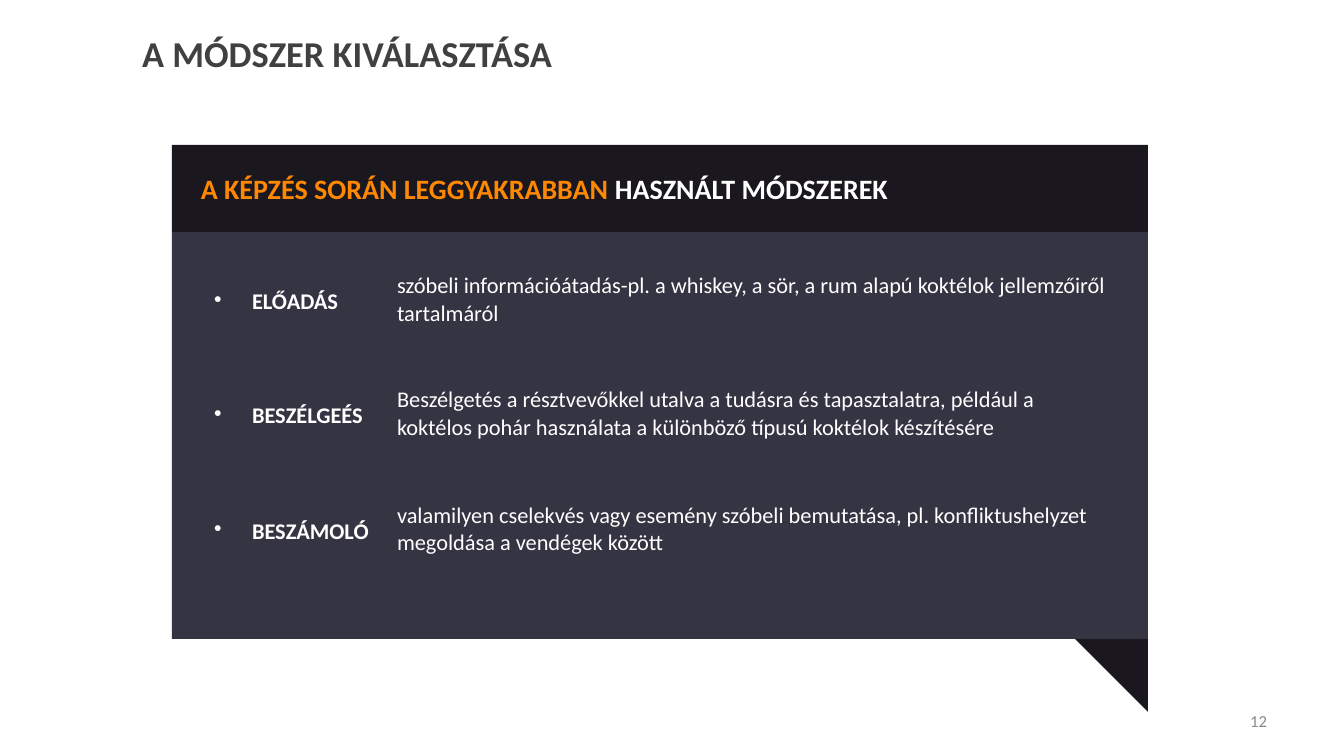
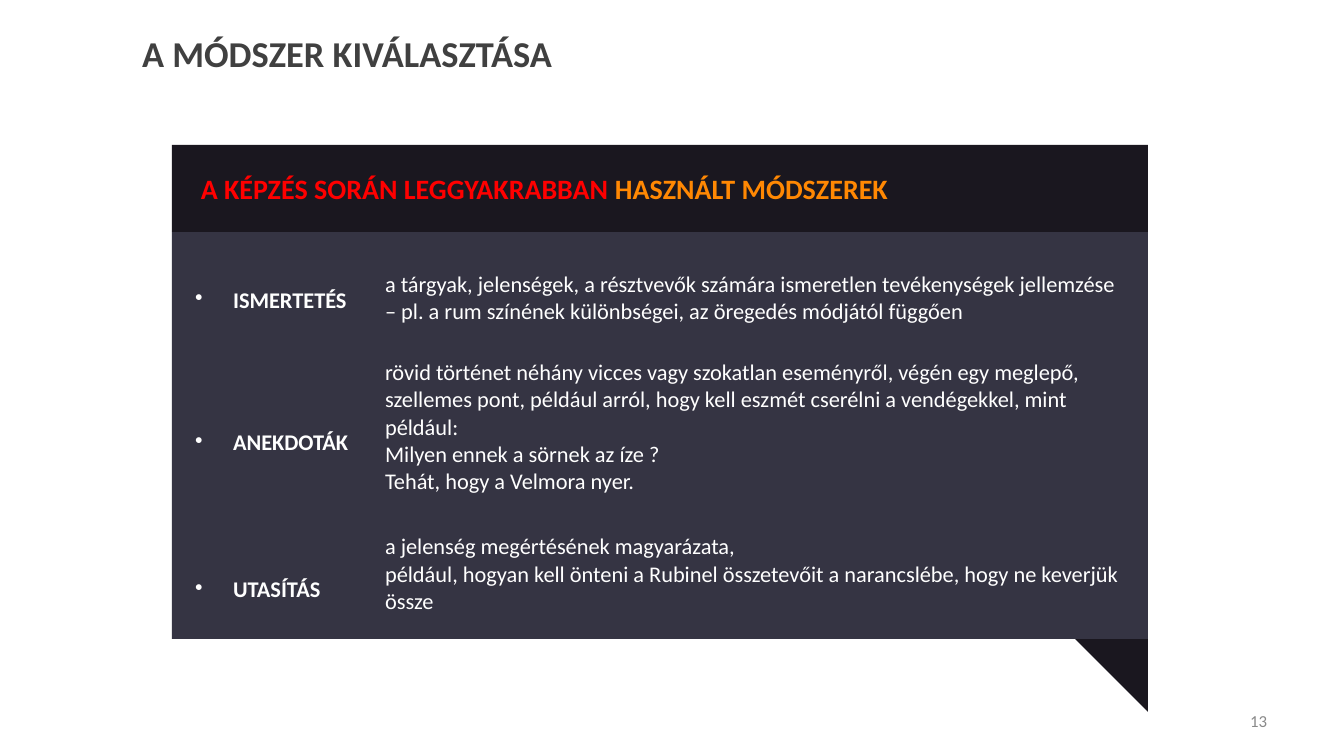
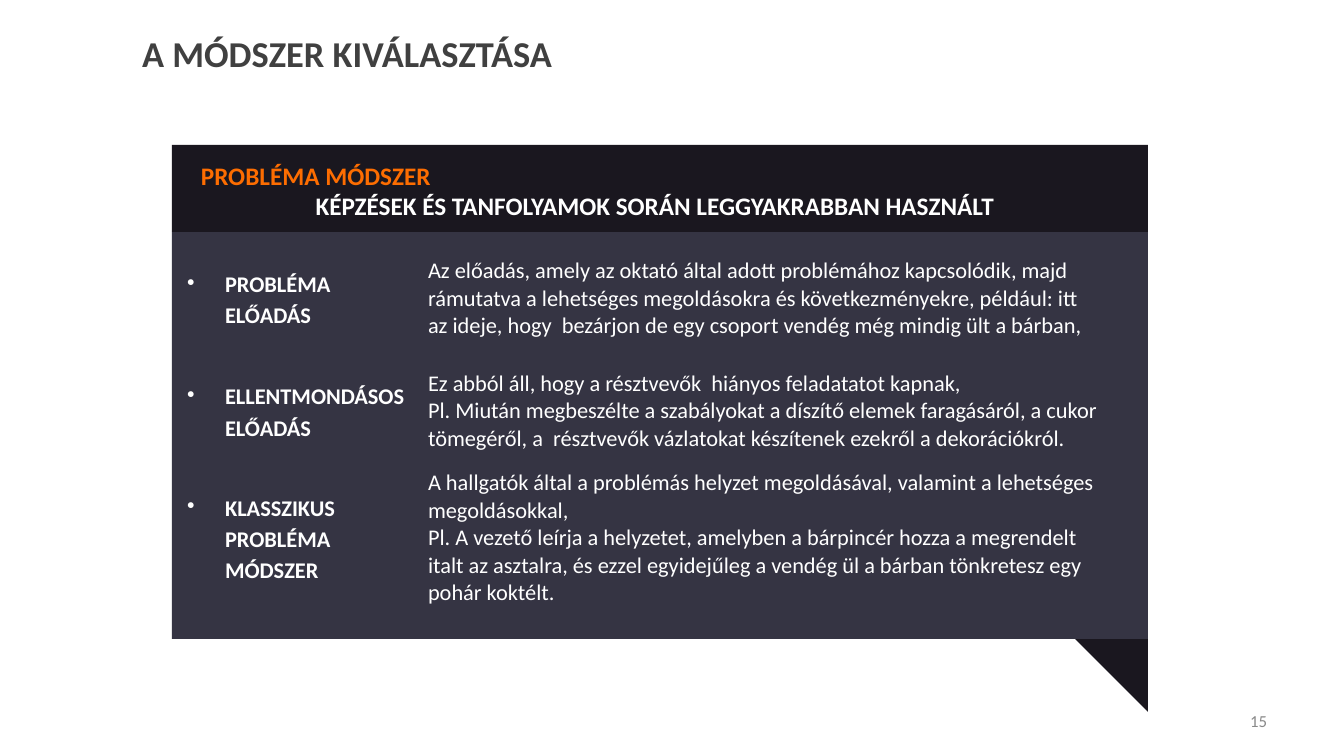
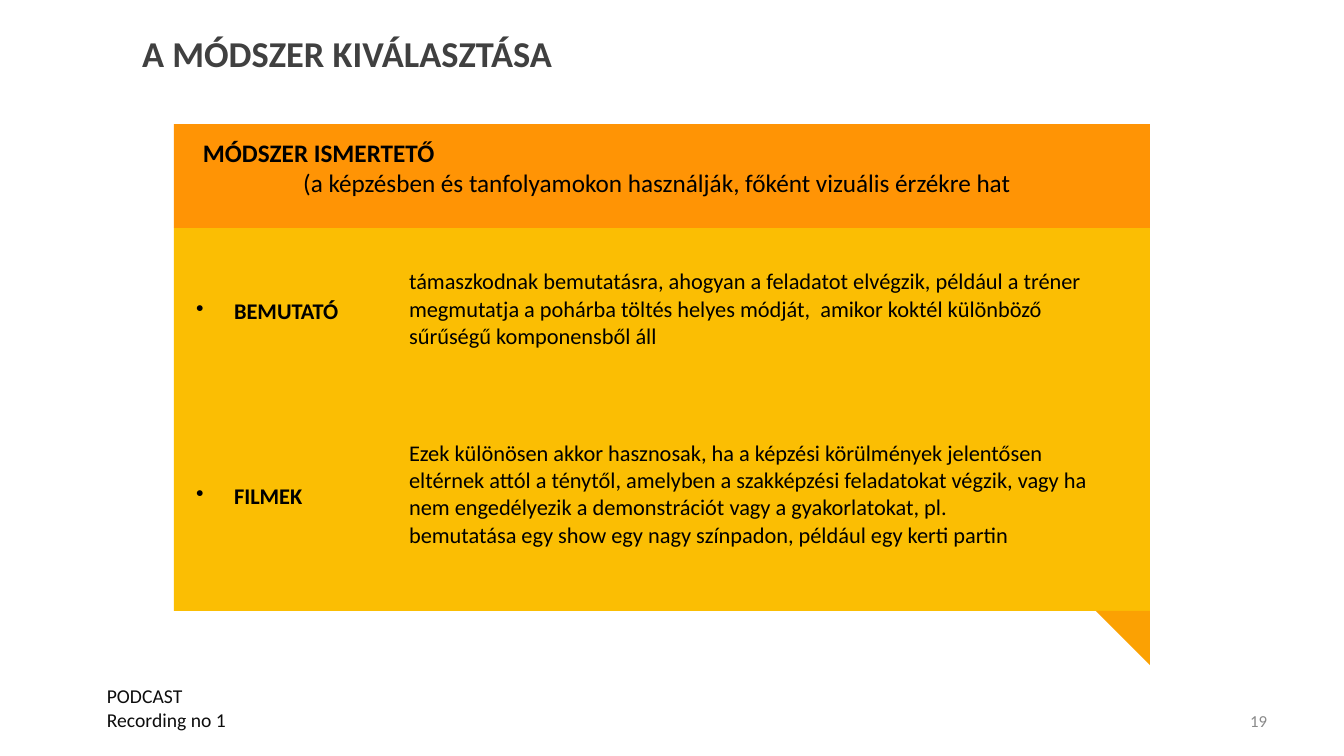
from collections import namedtuple
from dataclasses import dataclass

from lxml import etree
from pptx import Presentation
from pptx import util as u
from pptx.dml.color import RGBColor
from pptx.enum import shapes, text
from pptx.oxml.ns import qn

SCALE = 914400 / 100.8
LEFT, MID, RIGHT = text.PP_ALIGN.LEFT, text.PP_ALIGN.CENTER, text.PP_ALIGN.RIGHT
TITLE = "A MÓDSZER KIVÁLASZTÁSA"
PLAIN_GRID = "{2D5ABB26-0587-4C30-8999-92F81FD0307C}"


@dataclass(frozen=True)
class Theme:
    font: str = "Calibri"
    title: str = "404040"
    number: str = "898989"
    note: str = "0D0D0D"
    white: str = "FFFFFF"
    black: str = "000000"
    amber: str = "FF8803"
    orange: str = "FD6D01"
    red: str = "FF0000"
    title_pt: int = 26
    lead_pt: int = 20
    head_pt: int = 18
    cell_pt: int = 16
    note_pt: int = 14
    number_pt: int = 12


T = Theme()
Run = namedtuple("Run", "words color bold", defaults=(None, None))
# Places are px; fold is the side of the corner triangle.
Card = namedtuple("Card", "left top width band height fold head body corner ink")
DARK = Card(172, 145, 976, 87, 494, 73, "1A171F", "353443", "1A171F", T.white)
WARM = Card(174, 124, 976, 104, 487, 54, "FF9405", "FBBE03", "FBA103", T.black)


def px(n):
    return u.Emu(round(n * SCALE))


def box(*sides):
    return [px(n) for n in sides]


def write(frame, lines, size, color, bold=False, align=LEFT, anchor=None,
          wrap=True, bullet=False):
    """Fill a frame; a line is a string or a list of Runs, align may be a list."""
    frame.word_wrap = wrap
    if anchor is not None:
        frame.vertical_anchor = anchor
    for i, line in enumerate(lines):
        para = frame.paragraphs[0] if i == 0 else frame.add_paragraph()
        if bullet:
            dot(para)
        para.alignment = align[i] if isinstance(align, list) else align
        for part in [Run(line)] if isinstance(line, str) else line:
            run = para.add_run()
            run.text = part.words
            font = run.font
            font.name, font.size = T.font, u.Pt(size)
            font.bold = bold if part.bold is None else part.bold
            font.color.rgb = RGBColor.from_string(part.color or color)


def dot(para):
    props = para._p.get_or_add_pPr()
    props.set("marL", str(px(38)))
    props.set("indent", str(-px(38)))
    etree.SubElement(props, qn("a:buChar")).set("char", "•")
    para.line_spacing = 1.14
    para.space_after = u.Pt(6)


def label(slide, place, lines, size, color, **style):
    frame = slide.shapes.add_textbox(*box(*place)).text_frame
    write(frame, lines, size, color, **style)


def block(slide, kind, place, color):
    shape = slide.shapes.add_shape(kind, *box(*place))
    shape.shadow.inherit = False
    shape.fill.solid()
    shape.fill.fore_color.rgb = RGBColor.from_string(color)
    shape.line.fill.background()
    return shape


def panel(slide, card):
    kind = shapes.MSO_SHAPE
    base = card.top + card.height
    block(slide, kind.RECTANGLE,
          (card.left, card.top + card.band, card.width, card.height - card.band), card.body)
    block(slide, kind.RECTANGLE, (card.left, card.top, card.width, card.band), card.head)
    fold = block(slide, kind.RIGHT_TRIANGLE,
                 (card.left + card.width - card.fold, base, card.fold, card.fold), card.corner)
    fold.rotation = 180


def grid(slide, left, top, cols, rows, ink):
    """Draw rows of (height, label, lines, px kept free below the lines)."""
    high = sum(row[0] for row in rows)
    holder = slide.shapes.add_table(len(rows), 2, *box(left, top, sum(cols), high))
    table = holder.table
    table.first_row = table.horz_banding = False
    table._tbl.tblPr.find(qn("a:tableStyleId")).text = PLAIN_GRID
    for col, wide in zip(table.columns, cols):
        col.width = px(wide)
    for i, (tall, name, lines, free) in enumerate(rows):
        table.rows[i].height = px(tall)
        key, body = table.cell(i, 0), table.cell(i, 1)
        body.margin_bottom = px(5 + free)
        for cell in (key, body):
            cell.fill.background()
            cell.vertical_anchor = text.MSO_ANCHOR.MIDDLE
        write(key.text_frame, [name], T.cell_pt, ink, bold=True, bullet=True)
        write(body.text_frame, lines, T.cell_pt, ink)


def page(deck, number, card, head, drop, size, place, cols, rows):
    """Add a slide; drop is the heading's distance below the card's top."""
    slide = deck.slides.add_slide(deck.slide_layouts[5])
    middle = text.MSO_ANCHOR.MIDDLE
    title = slide.shapes.title
    title.left, title.top, title.width, title.height = box(132, 21, 936, 63)
    write(title.text_frame, [TITLE], T.title_pt, T.title, bold=True, anchor=middle)
    label(slide, (964, 701, 313, 40), [str(number)], T.number_pt, T.number,
          align=RIGHT, anchor=middle)
    panel(slide, card)
    label(slide, (card.left + 19, card.top + drop, 928, 72), head, size, card.ink,
          bold=True, align=[LEFT, MID])
    grid(slide, *place, cols, rows, card.ink)
    return slide


def main():
    deck = Presentation()
    deck.slide_width, deck.slide_height = box(1344, 756)
    often, used = "A KÉPZÉS SORÁN LEGGYAKRABBAN ", "HASZNÁLT MÓDSZEREK"

    page(deck, 12, DARK, [[Run(often, T.amber), Run(used)]], 22, T.lead_pt,
         (204, 243), (183, 733), [
        (114, "ELŐADÁS", ["szóbeli információátadás-pl. a whiskey, a sör, a rum alapú "
                          "koktélok jellemzőiről tartalmáról"], 0),
        (114, "BESZÉLGEÉS", ["Beszélgetés a résztvevőkkel utalva a tudásra és "
                             "tapasztalatra, például a koktélos pohár használata a "
                             "különböző típusú koktélok készítésére"], 0),
        (117, "BESZÁMOLÓ", ["valamilyen cselekvés vagy esemény szóbeli bemutatása, pl. "
                            "konfliktushelyzet megoldása a vendégek között"], 0),
    ])

    page(deck, 13, DARK, [[Run(often, T.red), Run(used, T.amber)]], 22, T.lead_pt,
         (185, 243), (190, 757), [
        (111, "ISMERTETÉS", ["a tárgyak, jelenségek, a résztvevők számára ismeretlen "
                             "tevékenységek jellemzése – pl. a rum színének "
                             "különbségei, az öregedés módjától függően"], 0),
        (174, "ANEKDOTÁK", ["rövid történet néhány vicces vagy szokatlan eseményről, "
                            "végén egy meglepő, szellemes pont, például arról, hogy "
                            "kell eszmét cserélni a vendégekkel, mint például:",
                            "Milyen ennek a sörnek az íze ?",
                            "Tehát, hogy a Velmora nyer."], 27),
        (120, "UTASÍTÁS", ["a jelenség megértésének magyarázata,",
                           "például, hogyan kell önteni a Rubinel összetevőit a "
                           "narancslébe, hogy ne keverjük össze"], 27),
    ])

    page(deck, 15, DARK, [[Run("PROBLÉMA MÓDSZER", T.orange)],
                          "KÉPZÉSEK ÉS TANFOLYAMOK SORÁN LEGGYAKRABBAN HASZNÁLT"],
         10, T.head_pt, (177, 235), (241, 692), [
        (127, "PROBLÉMA ELŐADÁS", [
            "Az előadás, amely az oktató által adott problémához kapcsolódik, majd "
            "rámutatva a lehetséges megoldásokra és következményekre, például: itt az "
            "ideje, hogy  bezárjon de egy csoport vendég még mindig ült a bárban,"], 0),
        (98, "ELLENTMONDÁSOS ELŐADÁS", [
            "Ez abból áll, hogy a résztvevők  hiányos feladatatot kapnak,",
            "Pl. Miután megbeszélte a szabályokat a díszítő elemek faragásáról, a cukor "
            "tömegéről, a  résztvevők vázlatokat készítenek ezekről a dekorációkról."], 0),
        (156, "KLASSZIKUS PROBLÉMA MÓDSZER", [
            "A hallgatók által a problémás helyzet megoldásával, valamint a lehetséges "
            "megoldásokkal,",
            "Pl. A vezető leírja a helyzetet, amelyben a bárpincér hozza a megrendelt "
            "italt az asztalra, és ezzel egyidejűleg a vendég ül a bárban tönkretesz egy "
            "pohár koktélt."], 0),
    ])

    films = page(deck, 19, WARM, [
        "MÓDSZER ISMERTETŐ",
        [Run("(a képzésben és tanfolyamokon használják, főként vizuális érzékre hat",
             bold=False)]], 8, T.head_pt, (186, 238), (213, 721), [
        (143, "BEMUTATÓ", [
            "támaszkodnak bemutatásra, ahogyan a feladatot elvégzik, például a tréner "
            "megmutatja a pohárba töltés helyes módját,  amikor koktél különböző "
            "sűrűségű komponensből áll"], 0),
        (227, "FILMEK", [
            "Ezek különösen akkor hasznosak, ha a képzési körülmények jelentősen "
            "eltérnek attól a ténytől, amelyben a szakképzési feladatokat végzik, vagy "
            "ha nem engedélyezik a demonstrációt vagy a gyakorlatokat, pl.",
            "bemutatása egy show egy nagy színpadon, például egy kerti partin"], 0),
    ])
    label(films, (97, 679, 145, 57), ["PODCAST", "Recording no 1"], T.note_pt, T.note,
          wrap=False)
    deck.save("out.pptx")


if __name__ == "__main__":
    main()
